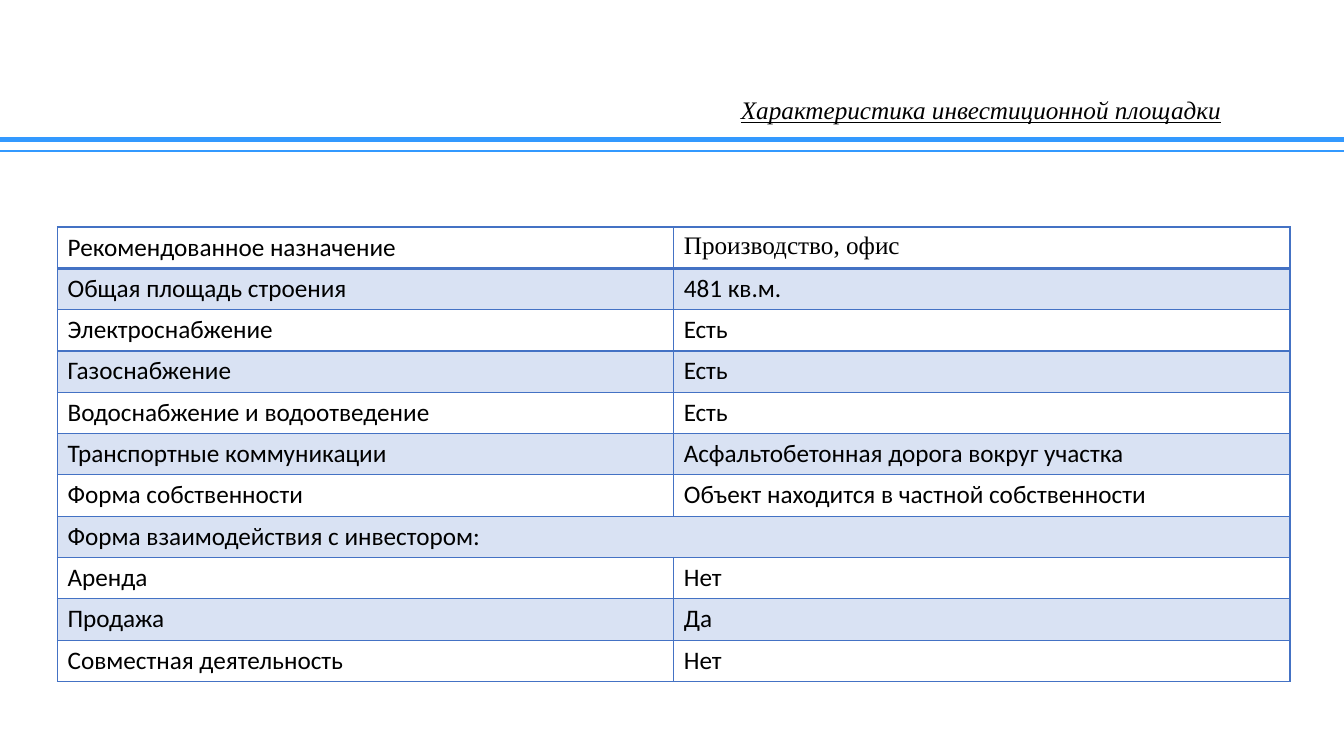
import dataclasses

import pptx
import pptx.dml.color
import pptx.enum.shapes
import pptx.enum.text
import pptx.oxml
import pptx.oxml.ns
import pptx.util
from pptx.util import Cm, Pt


@dataclasses.dataclass(frozen=True)
class Theme:
    rule: str = "3399FF"
    border: str = "4472C4"
    band: str = "D9E2F3"
    paper: str = "FFFFFF"
    ink: str = "000000"
    size: float = 18
    body_font: str = "Calibri"
    serif_font: str = "Times New Roman"


@dataclasses.dataclass(frozen=True)
class Box:
    left: float
    top: float
    width: float
    height: float


THEME = Theme()
PAGE = Box(0, 0, 33.87, 19.05)
HEADER = Box(0, 2.46, PAGE.width, 1.35)
FACTS = Box(1.45, 5.72, 31.06, 11.46)

TITLE = "Характеристика инвестиционной площадки"
SITE_FACTS = [
    ("Рекомендованное назначение", "Производство, офис"),
    ("Общая площадь строения", "481 кв.м."),
    ("Электроснабжение", "Есть"),
    ("Газоснабжение", "Есть"),
    ("Водоснабжение и водоотведение", "Есть"),
    ("Транспортные коммуникации", "Асфальтобетонная дорога вокруг участка"),
    ("Форма собственности", "Объект находится в частной собственности"),
    ("Форма взаимодействия с инвестором:", None),
    ("Аренда", "Нет"),
    ("Продажа", "Да"),
    ("Совместная деятельность", "Нет"),
]


def color(value):
    return pptx.dml.color.RGBColor.from_string(value)


def set_format(target, values):
    for name, value in values.items():
        setattr(target, name, value)


def write(para, text, font_name, **extra):
    span = para.add_run()
    span.text = text
    set_format(span.font, {"name": font_name, "size": Pt(THEME.size), **extra})
    span.font.color.rgb = color(THEME.ink)


def add_rule(page, box, offset, weight):
    top = Cm(box.top + offset)
    rule = page.shapes.add_connector(
        pptx.enum.shapes.MSO_CONNECTOR.STRAIGHT,
        Cm(box.left), top, Cm(box.left + box.width), top)
    rule.line.color.rgb = color(THEME.rule)
    rule.line.width = Pt(weight)
    properties = rule._element.spPr
    properties.append(pptx.oxml.parse_xml(
        f'<a:effectLst {pptx.oxml.ns.nsdecls("a")}/>'))


def add_header(page, box):
    # Double rule across the page
    for offset, weight in ((1.05, 3.5), (1.35, 1.5)):
        add_rule(page, box, offset, weight)

    # Title in the right half
    half = box.width / 2
    title = page.shapes.add_textbox(
        Cm(box.left + half), Cm(box.top), Cm(half - 1.36), Cm(0.69))
    set_format(title.text_frame, {
        "word_wrap": True,
        "vertical_anchor": pptx.enum.text.MSO_ANCHOR.MIDDLE,
    })
    para = title.text_frame.paragraphs[0]
    set_format(para, {
        "alignment": pptx.enum.text.PP_ALIGN.CENTER, "line_spacing": 0.9})
    write(para, TITLE, THEME.serif_font, italic=True, underline=True)


def set_borders(cell, weights):
    properties = cell._tc.get_or_add_tcPr()
    for side, weight in weights.items():
        properties.append(pptx.oxml.parse_xml(
            f'<a:ln{side} {pptx.oxml.ns.nsdecls("a")} w="{Pt(weight)}">'
            f'<a:solidFill><a:srgbClr val="{THEME.border}"/></a:solidFill>'
            f'</a:ln{side}>'))


def add_facts(page, box):
    table = page.shapes.add_table(
        len(SITE_FACTS), 2,
        Cm(box.left), Cm(box.top), Cm(box.width), Cm(box.height)).table
    set_format(table, {"first_row": False, "horz_banding": False})
    for row in table.rows:
        row.height = Cm(box.height / len(SITE_FACTS))

    for row_index, facts in enumerate(SITE_FACTS):
        for column_index, text in enumerate(facts):
            cell = table.cell(row_index, column_index)
            # The line under the first row is heavier
            set_borders(cell, {
                "L": 1, "R": 1,
                "T": 2 if row_index == 1 else 1,
                "B": 2 if row_index == 0 else 1,
            })
            cell.fill.solid()
            cell.fill.fore_color.rgb = color(
                THEME.band if row_index % 2 else THEME.paper)
            if text is None:
                table.cell(row_index, 0).merge(cell)
                continue
            is_purpose = (row_index, column_index) == (0, 1)
            write(cell.text_frame.paragraphs[0], text,
                  THEME.serif_font if is_purpose else THEME.body_font)


def main():
    deck = pptx.Presentation()
    set_format(deck, {
        "slide_width": Cm(PAGE.width), "slide_height": Cm(PAGE.height)})
    page = deck.slides.add_slide(deck.slide_layouts[6])
    add_header(page, HEADER)
    add_facts(page, FACTS)
    deck.save("out.pptx")


if __name__ == "__main__":
    main()
